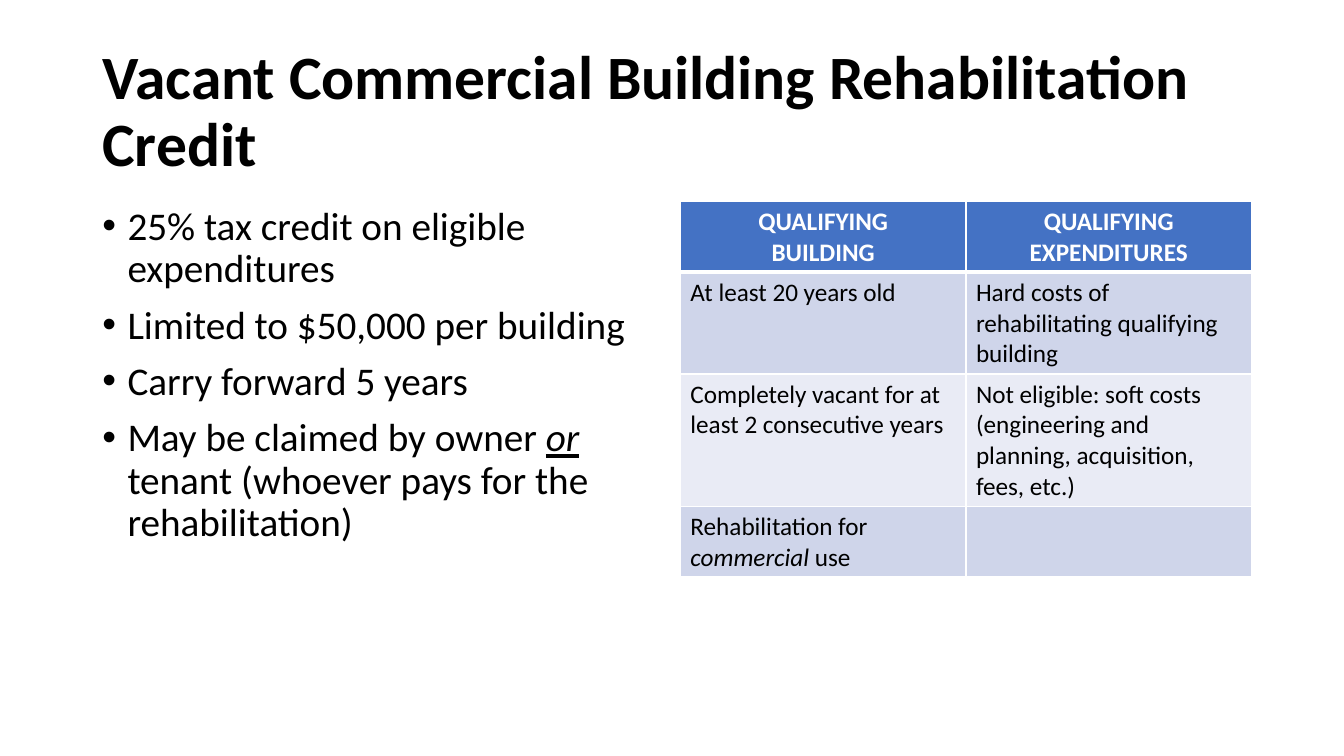
from lxml.etree import SubElement
from pptx import Presentation
from pptx.dml.color import RGBColor
from pptx.enum.text import MSO_ANCHOR, PP_ALIGN
from pptx.oxml.ns import qn
from pptx.util import Pt

PX = 9525  # EMU in one px, 96 px to the inch
BLACK = RGBColor(0x00, 0x00, 0x00)
WHITE = RGBColor(0xFF, 0xFF, 0xFF)
BLUE = RGBColor(0x44, 0x72, 0xC4)
BAND = RGBColor(0xCF, 0xD5, 0xEA)
PALE = RGBColor(0xE9, 0xEB, 0xF5)

TITLE = "Vacant Commercial Building Rehabilitation Credit"
POINTS = [
    ["25% tax credit on eligible expenditures"],
    ["Limited to $50,000 per building"],
    ["Carry forward 5 years"],
    ["May be claimed by owner ", ("or", {"italic": True, "underline": True}),
     " tenant (whoever pays for the rehabilitation)"],
]
# Each cell is a list of paragraphs, each paragraph a list of runs
ROWS = [
    [[["QUALIFYING"], ["BUILDING"]], [["QUALIFYING EXPENDITURES"]]],
    [[["At least 20 years old"]],
     [["Hard costs of rehabilitating qualifying building"]]],
    [[["Completely vacant for at least 2 consecutive years"]],
     [["Not eligible: soft costs (engineering and planning, acquisition, "
       "fees, etc.)"]]],
    [[["Rehabilitation for ", ("commercial ", {"italic": True}), "use"]], []],
]
HEIGHTS = [67, 97, 126, 67]


class Deck:
    font = "Calibri"

    def __init__(self, wide, high):
        self.prs = Presentation()
        self.prs.slide_width, self.prs.slide_height = wide * PX, high * PX
        self.slide = self.prs.slides.add_slide(self.prs.slide_layouts[6])

    def fill_text(self, frame, paras, face, form):
        """Fill a text frame with paragraphs of plain or styled runs."""
        for i, runs in enumerate(paras):
            para = frame.add_paragraph() if i else frame.paragraphs[0]
            for name, value in form.items():
                setattr(para, name, value)
            for item in runs:
                text, extra = (item, {}) if isinstance(item, str) else item
                run = para.add_run()
                run.text = text
                look = {"name": self.font, **face, **extra}
                run.font.color.rgb = look.pop("color")
                for name, value in look.items():
                    setattr(run.font, name, value)

    def text(self, box, paras, face, form, anchor=MSO_ANCHOR.TOP):
        frame = self.slide.shapes.add_textbox(*(n * PX for n in box)).text_frame
        frame.word_wrap = True
        frame.vertical_anchor = anchor
        self.fill_text(frame, paras, face, form)
        return frame

    def bullets(self, box, paras, face, form):
        for para in self.text(box, paras, face, form).paragraphs:
            props = para._p.get_or_add_pPr()
            props.set("marL", str(24 * PX))
            props.set("indent", str(-24 * PX))
            SubElement(props, qn("a:buFont"), typeface="Arial")
            SubElement(props, qn("a:buChar"), char="•")

    def border(self, cell, sides):
        props = cell._tc.get_or_add_tcPr()
        for side, width in sides.items():
            line = SubElement(props, qn("a:ln" + side), w=str(Pt(width)))
            fill = SubElement(line, qn("a:solidFill"))
            SubElement(fill, qn("a:srgbClr"), val=str(WHITE))

    def table(self, left, top, wide, rows, heights):
        box = (left, top, wide, sum(heights))
        table = self.slide.shapes.add_table(
            len(rows), len(rows[0]), *(n * PX for n in box)).table
        for r, (row, high) in enumerate(zip(rows, heights)):
            table.rows[r].height = high * PX
            head = r == 0
            face = {"size": Pt(18), "bold": head, "color": WHITE if head else BLACK}
            form = {"alignment": PP_ALIGN.CENTER if head else PP_ALIGN.LEFT}
            for c, paras in enumerate(row):
                cell = table.cell(r, c)
                # A thick rule parts the header from the body
                self.border(cell, {"L": 1, "R": 1, "T": 3 if r == 1 else 1,
                                   "B": 3 if head else 1})
                cell.fill.solid()
                cell.fill.fore_color.rgb = BLUE if head else BAND if r % 2 else PALE
                self.fill_text(cell.text_frame, paras, face, form)


def main():
    deck = Deck(1280, 720)
    # Title
    deck.text((88, 38, 1104, 139), [[TITLE]],
              {"size": Pt(44), "bold": True, "color": BLACK},
              {"line_spacing": 0.9}, MSO_ANCHOR.MIDDLE)
    # Key points
    deck.bullets((88, 192, 544, 457), POINTS,
                 {"size": Pt(28), "color": BLACK},
                 {"line_spacing": 0.9, "space_before": Pt(10)})
    # Qualifying rules
    deck.table(648, 192, 544, ROWS, HEIGHTS)
    deck.prs.save("out.pptx")


if __name__ == "__main__":
    main()
